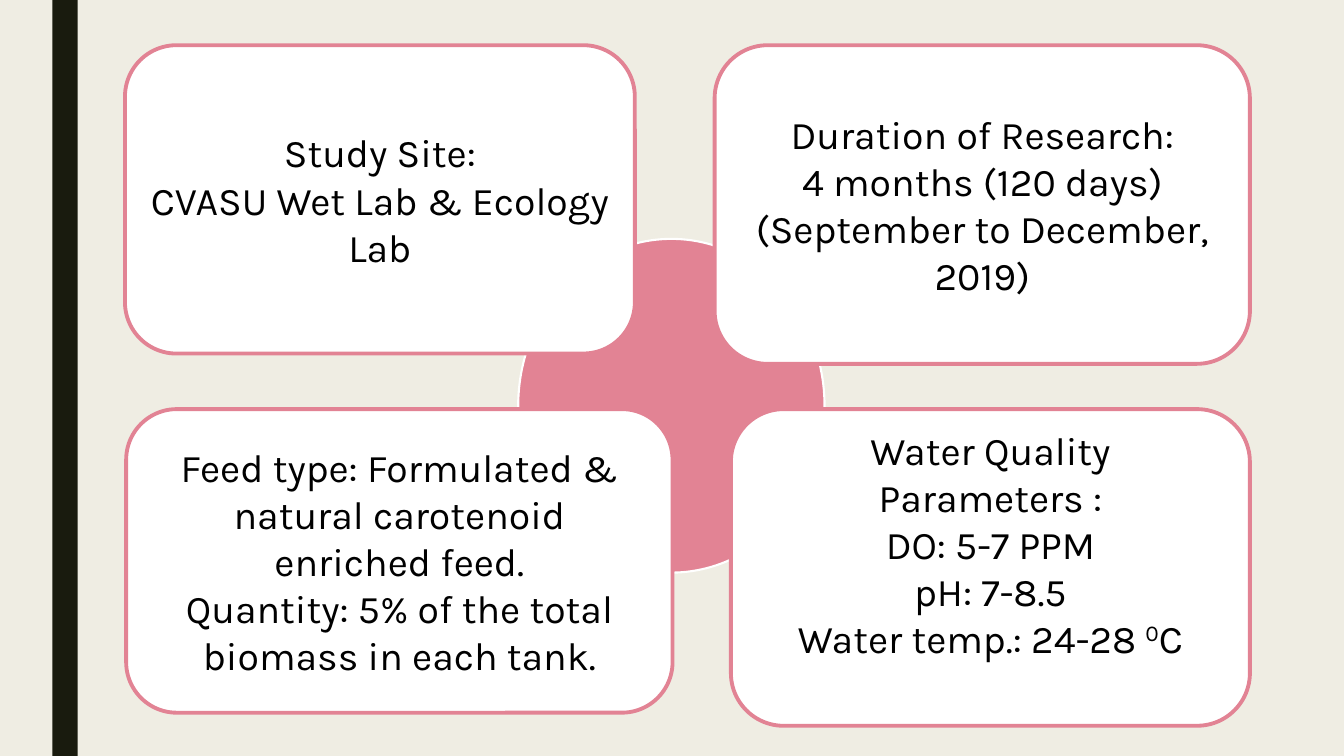
from dataclasses import dataclass

from pptx import Presentation
from pptx.dml.color import RGBColor
from pptx.enum.shapes import MSO_SHAPE
from pptx.enum.text import MSO_ANCHOR, PP_ALIGN
from pptx.util import Cm, Pt


@dataclass(frozen=True)
class Theme:
    background: RGBColor = RGBColor(0xEF, 0xED, 0xE3)
    bar: RGBColor = RGBColor(0x19, 0x1B, 0x0E)
    pink: RGBColor = RGBColor(0xE2, 0x83, 0x94)
    white: RGBColor = RGBColor(0xFF, 0xFF, 0xFF)
    text: RGBColor = RGBColor(0, 0, 0)
    font: str = "Karla"
    text_size: Pt = Pt(28)
    card_line: Pt = Pt(2.75)
    circle_line: Pt = Pt(1.5)


THEME = Theme()
TOP_ROW, BOTTOM_ROW = 1.14, 10.31

# Left, top, width and height in centimetres, then the paragraphs.
# A paragraph given as a tuple alternates normal and superscript text.
CARDS = [
    ((18.01, TOP_ROW, 13.49, 8.03),
     ["Duration of Research:",
      "4 months (120 days) (September to December, 2019)"]),
    ((18.42, BOTTOM_ROW, 13.08, 7.98),
     ["Water Quality Parameters :", "DO: 5-7 PPM", "pH: 7-8.5",
      ("Water temp.: 24-28 ", "0", "C")]),
    ((3.15, TOP_ROW, 12.85, 7.77),
     ["Study Site:", "CVASU Wet Lab & Ecology Lab"]),
    ((3.18, BOTTOM_ROW, 13.77, 7.65),
     ["Feed type: Formulated & natural carotenoid enriched feed.",
      "Quantity: 5% of the total biomass in each tank."]),
]


def add_filled_shape(page, kind, bounds, fill, line=None, line_width=None):
    shape = page.shapes.add_shape(kind, *(Cm(length) for length in bounds))
    shape.shadow.inherit = False
    shape.fill.solid()
    shape.fill.fore_color.rgb = fill
    if line is None:
        shape.line.fill.background()
    else:
        shape.line.color.rgb = line
        shape.line.width = line_width
    return shape


def write_paragraph(para, content):
    para.alignment = PP_ALIGN.CENTER
    para.font.name = THEME.font
    para.font.size = THEME.text_size
    para.font.color.rgb = THEME.text
    parts = (content,) if isinstance(content, str) else content
    for index, text in enumerate(parts):
        span = para.add_run()
        span.text = text
        if index % 2:
            span.font._element.set("baseline", "30000")


def add_card(page, bounds, paragraphs):
    card = add_filled_shape(page, MSO_SHAPE.ROUNDED_RECTANGLE, bounds,
                            THEME.white, THEME.pink, THEME.card_line)
    frame = card.text_frame
    frame.word_wrap = True
    frame.vertical_anchor = MSO_ANCHOR.MIDDLE
    for index, content in enumerate(paragraphs):
        para = frame.add_paragraph() if index else frame.paragraphs[0]
        write_paragraph(para, content)
    return card


def main():
    deck = Presentation()
    deck.slide_width, deck.slide_height = Cm(33.87), Cm(19.05)
    page = deck.slides.add_slide(deck.slide_layouts[6])
    page.background.fill.solid()
    page.background.fill.fore_color.rgb = THEME.background

    add_filled_shape(page, MSO_SHAPE.RECTANGLE, (1.32, 0, 0.64, 19.05), THEME.bar)
    add_filled_shape(page, MSO_SHAPE.OVAL, (13.06, 6.02, 7.72, 8.41),
                     THEME.pink, THEME.white, THEME.circle_line)
    duration, water, site, feed = [add_card(page, *card) for card in CARDS]
    water.text_frame.margin_bottom = Cm(1.32)  # lifts the text by half a line

    deck.save("out.pptx")


if __name__ == "__main__":
    main()
